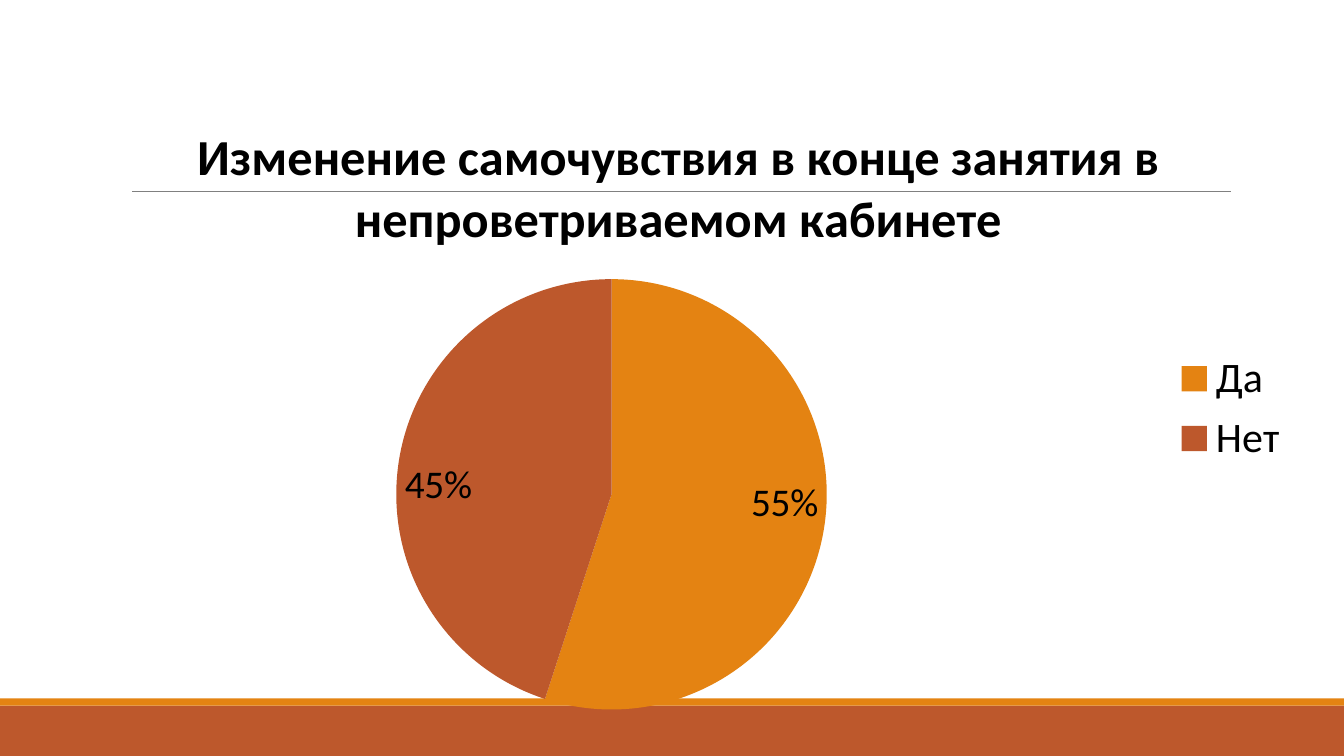
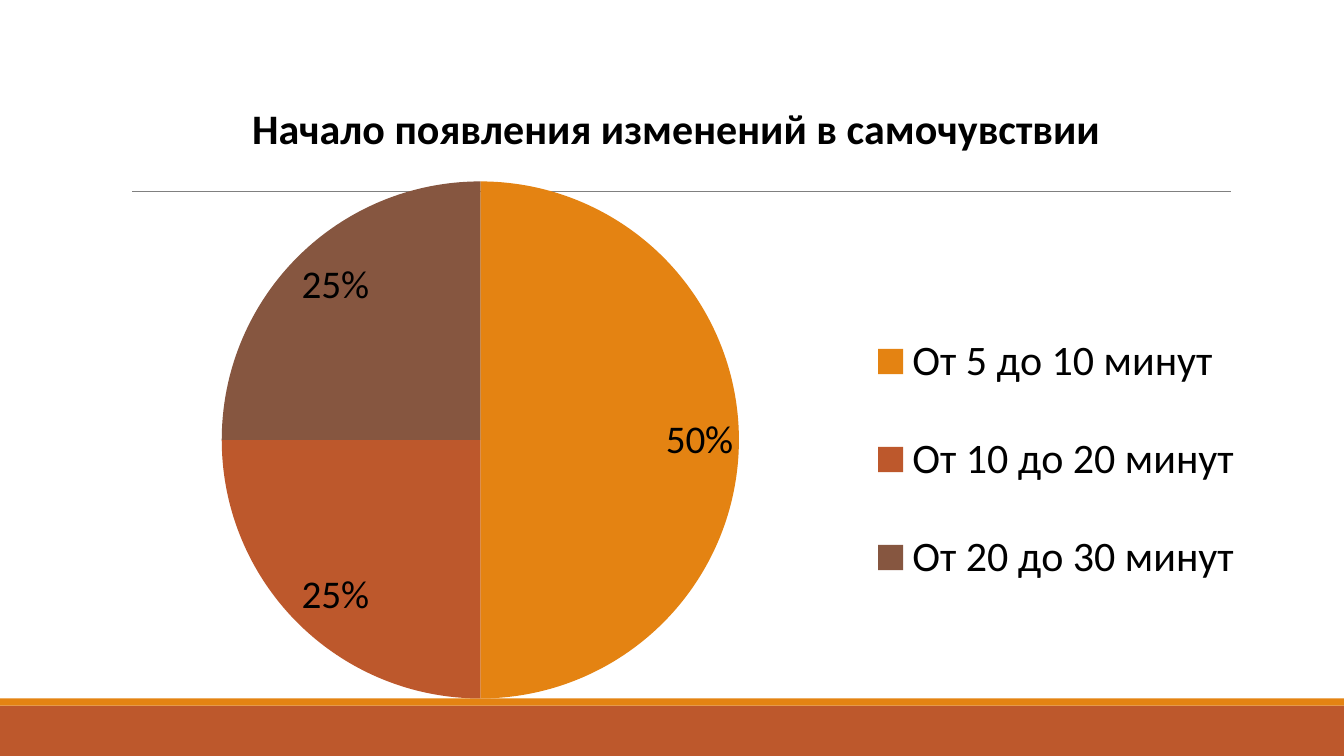
from dataclasses import dataclass

from lxml import etree
from pptx import Presentation
from pptx.chart.data import CategoryChartData
from pptx.dml.color import RGBColor
from pptx.enum.chart import XL_CHART_TYPE, XL_LABEL_POSITION, XL_LEGEND_POSITION
from pptx.enum.shapes import MSO_CONNECTOR, MSO_SHAPE
from pptx.oxml.ns import qn
from pptx.util import Inches, Pt

PIE = XL_CHART_TYPE.PIE
INSIDE_END = XL_LABEL_POSITION.INSIDE_END
RIGHT = XL_LEGEND_POSITION.RIGHT
RECTANGLE = MSO_SHAPE.RECTANGLE
STRAIGHT = MSO_CONNECTOR.STRAIGHT


@dataclass(frozen=True)
class Theme:
    font: str = "Calibri"
    text: str = "000000"
    rule: str = "808080"
    orange: str = "E48312"
    rust: str = "BD582C"
    brown: str = "865640"
    legend_size: int = 30
    label_size: int = 28

    @property
    def slices(self):
        return self.orange, self.rust, self.brown


@dataclass(frozen=True)
class Box:
    """A rectangle on the slide, in inches."""
    left: float
    top: float
    width: float
    height: float

    def lengths(self):
        return [Inches(n) for n in (self.left, self.top, self.width, self.height)]

    def shares_of(self, outer):
        return {
            "x": (self.left - outer.left) / outer.width,
            "y": (self.top - outer.top) / outer.height,
            "w": self.width / outer.width,
            "h": self.height / outer.height,
        }


THEME = Theme()
SLIDE = Box(0, 0, 13.33, 7.5)
FOOTER = Box(0, 6.93, SLIDE.width, 0.57)
RULE = Box(1.31, 1.9, 10.9, 0)

PAGES = [
    dict(
        title="Изменение самочувствия в конце занятия в непроветриваемом кабинете",
        title_size=36,
        shares={"Да": 0.55, "Нет": 0.45},
        box=Box(0.55, 0.93, 12.36, 6.25),
        pie=Box(3.93, 2.77, 4.27, 4.27),
    ),
    dict(
        title="Начало появления изменений в самочувствии",
        title_size=30,
        shares={
            "От 5 до 10 минут": 0.5,
            "От 10 до 20 минут": 0.25,
            "От 20 до 30 минут": 0.25,
        },
        box=Box(0.6, 0.73, 12.22, 6.35),
        pie=Box(2.2, 1.8, 5.13, 5.13),
        legend=Box(8.55, 2.87, 3.85, 3.38),
    ),
]


def color(value):
    return RGBColor.from_string(value)


def style_font(font, size, bold=False):
    font.name = THEME.font
    font.size = Pt(size)
    font.bold = bold
    font.color.rgb = color(THEME.text)


def add_band(page, box, fill):
    band = page.shapes.add_shape(RECTANGLE, *box.lengths())
    band.shadow.inherit = False
    band.fill.solid()
    band.fill.fore_color.rgb = color(fill)
    band.line.fill.background()


def add_footer(page, box, stripe=0.07):
    """Rust band with a thin orange stripe along its top."""
    add_band(page, Box(box.left, box.top + stripe, box.width, box.height - stripe),
             THEME.rust)
    add_band(page, Box(box.left, box.top, box.width, stripe), THEME.orange)


def add_rule(page, box):
    left, top, width, height = box.lengths()
    rule = page.shapes.add_connector(STRAIGHT, left, top, left + width, top + height)
    rule.line.color.rgb = color(THEME.rule)
    rule.line.width = Pt(0.5)
    etree.SubElement(rule._element.spPr, qn("a:effectLst"))


def set_layout(parent, index, shares, inner=False):
    """Fix the place of a chart part, as shares of the chart box."""
    for old in parent.findall(qn("c:layout")):
        parent.remove(old)
    layout = etree.Element(qn("c:layout"))
    manual = etree.SubElement(layout, qn("c:manualLayout"))
    settings = {"layoutTarget": "inner"} if inner else {}
    settings.update(xMode="edge", yMode="edge")
    settings.update((key, f"{share:.4f}") for key, share in shares.items())
    for tag, value in settings.items():
        etree.SubElement(manual, qn(f"c:{tag}")).set("val", value)
    parent.insert(index, layout)


def add_chart_title(chart, text, size):
    chart.has_title = True
    chart.chart_title.include_in_layout = False
    para = chart.chart_title.text_frame.paragraphs[0]
    span = para.add_run()
    span.text = text
    style_font(span.font, size, bold=True)


def add_legend(chart, box, legend_box):
    chart.has_legend = True
    legend = chart.legend
    legend.position = RIGHT
    legend.include_in_layout = False
    style_font(legend.font, THEME.legend_size)
    if legend_box:
        set_layout(legend._element, 1, legend_box.shares_of(box))


def style_slices(plot):
    plot.vary_by_categories = True
    series = plot.series[0]
    for index, fill in zip(range(len(series.values)), THEME.slices):
        point = series.points[index].format
        point.fill.solid()
        point.fill.fore_color.rgb = color(fill)
        point.line.fill.background()
    labels = series.data_labels
    labels.show_value = True
    labels.number_format = "0%"
    labels.number_format_is_linked = False
    labels.position = INSIDE_END
    style_font(labels.font, THEME.label_size)


def add_pie(page, title, title_size, shares, box, pie, legend=None):
    data = CategoryChartData(number_format="0%")
    data.categories = list(shares)
    data.add_series(title, list(shares.values()))
    chart = page.shapes.add_chart(PIE, *box.lengths(), data).chart
    style_font(chart.font, 10)
    add_chart_title(chart, title, title_size)
    add_legend(chart, box, legend)
    style_slices(chart.plots[0])
    plot_area = chart._chartSpace.chart.plotArea
    set_layout(plot_area, 0, pie.shares_of(box), inner=True)


def add_page(deck, content):
    page = deck.slides.add_slide(deck.slide_layouts[6])
    add_footer(page, FOOTER)
    add_rule(page, RULE)
    add_pie(page, **content)


def main():
    deck = Presentation()
    deck.slide_width, deck.slide_height = SLIDE.lengths()[2:]
    for content in PAGES:
        add_page(deck, content)
    deck.save("out.pptx")


if __name__ == "__main__":
    main()
